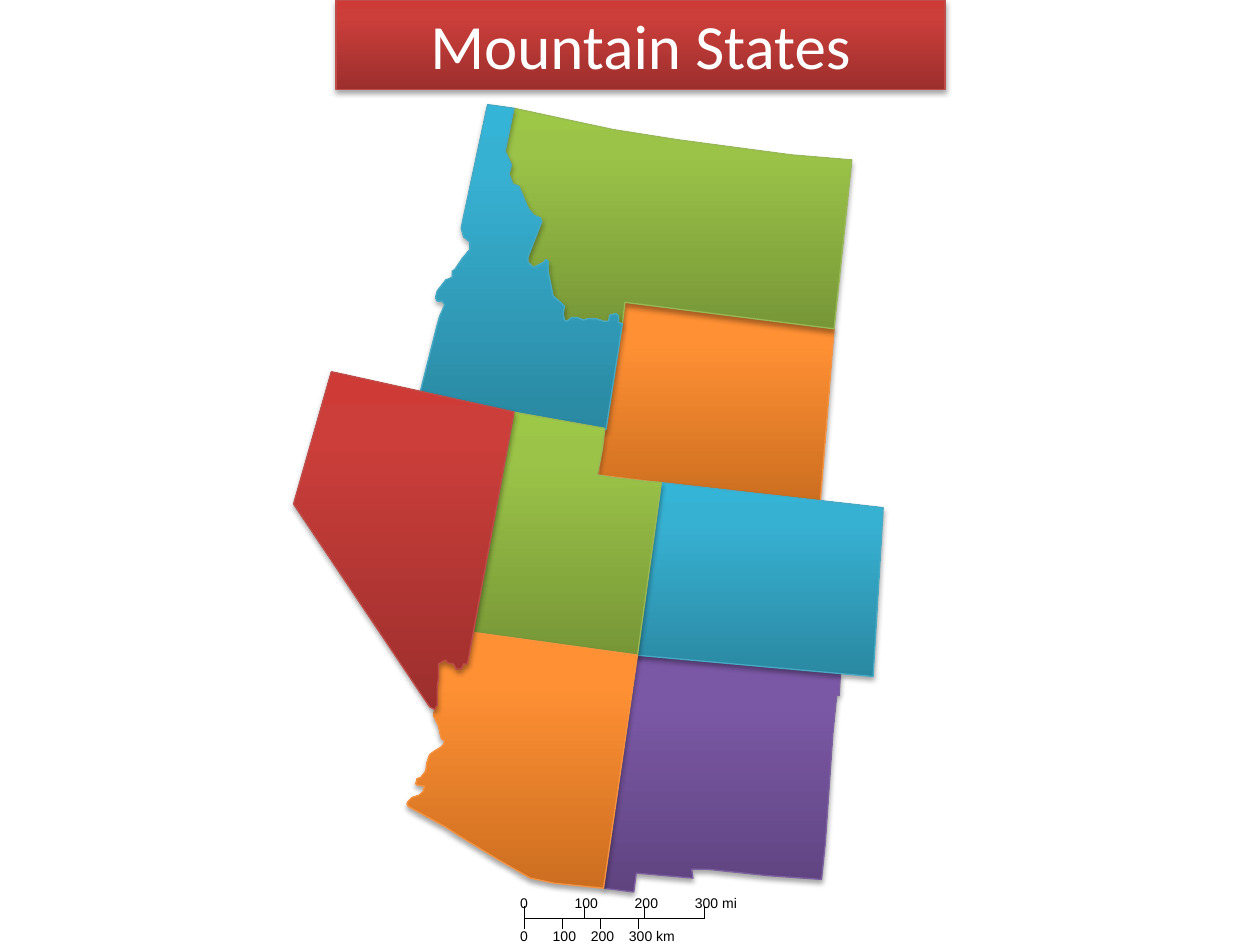
from copy import deepcopy

from lxml.etree import SubElement
from pptx import Presentation
from pptx.dml.color import RGBColor
from pptx.enum.shapes import MSO_CONNECTOR
from pptx.enum.text import MSO_ANCHOR, MSO_AUTO_SIZE, PP_ALIGN
from pptx.oxml.ns import qn
from pptx.util import Pt

COLORS = {"text": "000000", "title": "FFFFFF"}
# Gradient from bottom to top, then the outline
THEMES = {
    "red": ("9C2F2D", "CB3E3A", "CE3B37", "BF4C48"),
    "green": ("779737", "9BC348", "9DC746", "98B955"),
    "purple": ("5F4480", "7B58A6", "7C57A8", "7D60A0"),
    "blue": ("2A88A2", "37B1D2", "34B4D6", "46AAC5"),
    "orange": ("CC6E20", "FF9034", "FF9136", "F69240"),
}

MAP_UNIT = Pt(0.72)  # state outlines are given in this unit

IDAHO_MONTANA = [
    (408, 86), (401, 120), (406, 131), (404, 138), (407, 146), (412, 148),
    (419, 165), (423, 170), (424, 171), (429, 173), (430, 176), (419, 204),
    (419, 208), (423, 212), (424, 212), (432, 208), (433, 206), (435, 207),
    (435, 215), (439, 235), (445, 240), (448, 243), (447, 249), (448, 254),
    (450, 255), (454, 252), (458, 252), (463, 254), (467, 253), (473, 253),
    (479, 255), (483, 255), (484, 250), (489, 249), (491, 251), (491, 256),
    (494, 257),
]
NEVADA_ARIZONA = [
    (371, 527), (368, 527), (366, 531), (362, 531), (360, 527), (355, 526),
    (354, 524), (353, 524), (348, 527), (348, 538), (347, 546), (347, 560),
    (345, 563),
]
NEW_MEXICO = [
    (550, 697), (549, 690), (562, 690), (609, 695), (652, 698), (655, 669),
    (661, 582), (664, 552), (666, 552), (667, 535), (506, 518), (479, 705),
    (503, 708), (505, 693),
]
WYOMING = [(662, 261), (496, 240), (475, 377), (651, 399)]
MONTANA = IDAHO_MONTANA + [
    (496, 240), (662, 261), (676, 127), (628, 123), (583, 117), (538, 111),
    (487, 103), (459, 97),
]
COLORADO = [(693, 537), (701, 403), (524, 383), (505, 520)]
IDAHO = IDAHO_MONTANA + [
    (481, 341), (333, 313), (347, 258), (349, 251), (353, 242), (351, 239),
    (347, 239), (346, 237), (346, 235), (347, 231), (354, 222), (357, 221),
    (359, 220), (359, 215), (361, 214), (367, 205), (373, 198), (373, 192),
    (368, 188), (366, 181), (387, 83),
]
UTAH = [
    (506, 520), (375, 502), (407, 327), (480, 340), (478, 357), (474, 377),
    (486, 379), (512, 382), (525, 383),
]
ARIZONA = NEVADA_ARIZONA + [
    (344, 568), (348, 576), (350, 585), (351, 587), (353, 588), (352, 591),
    (350, 593), (345, 596), (341, 599), (339, 605), (338, 612), (334, 617),
    (331, 618), (331, 619), (330, 622), (331, 623), (337, 624), (336, 628),
    (333, 631), (327, 633), (324, 636), (323, 638), (324, 640), (353, 656),
    (372, 668), (395, 682), (421, 697), (440, 701), (479, 705), (506, 520),
    (376, 502),
]
NEVADA = NEVADA_ARIZONA + [(341, 561), (233, 400), (263, 295), (408, 327)]

STATES = [
    (NEW_MEXICO, "purple"), (WYOMING, "orange"), (MONTANA, "green"),
    (COLORADO, "blue"), (IDAHO, "blue"), (UTAH, "green"),
    (ARIZONA, "orange"), (NEVADA, "red"),
]

SCALE_LEFT, SCALE_RIGHT, SCALE_Y = 299.5, 403, 524.5
# Labels, tick spacing, tick end, label top
SCALES = [
    (("0", "100", "200", "300 mi"), 34.35, 517.7, 511.2),
    (("0", "100", "200", "300 km"), 21.8, 530.6, 529.9),
]


def set_text(tf, text, *, size, font, color, align=PP_ALIGN.LEFT,
             anchor=MSO_ANCHOR.TOP, wrap=False, margin=0):
    tf.word_wrap = wrap
    tf.auto_size = MSO_AUTO_SIZE.NONE
    tf.vertical_anchor = anchor
    tf.margin_left = tf.margin_right = Pt(margin)
    tf.margin_top = tf.margin_bottom = Pt(margin / 2)
    p = tf.paragraphs[0]
    p.alignment = align
    r = p.add_run()
    r.text = text
    r.font.size = Pt(size)
    r.font.name = font
    r.font.color.rgb = RGBColor.from_string(COLORS[color])


def apply_theme(sp, theme):
    """Give a shape its three-stop gradient, outline and soft shadow."""
    *stops, outline = THEMES[theme]
    sp.fill.gradient()
    sp.fill.gradient_angle = 90
    gs_list = sp.element.spPr.find(".//" + qn("a:gsLst"))
    gs_list.append(deepcopy(gs_list[0]))
    for stop, pos, color in zip(sp.fill.gradient_stops, (0, 0.8, 1), stops):
        stop.position = pos
        stop.color.rgb = RGBColor.from_string(color)
    sp.line.color.rgb = RGBColor.from_string(outline)
    sp.line.width = Pt(0.75)
    sp.shadow.inherit = False
    effects = sp.element.spPr.find(qn("a:effectLst"))
    shadow = SubElement(effects, qn("a:outerShdw"), blurRad=str(Pt(3.1)),
                        dist=str(Pt(1.8)), dir="5400000", rotWithShape="0")
    color = SubElement(shadow, qn("a:srgbClr"), val=COLORS["text"])
    SubElement(color, qn("a:alpha"), val="35000")


def add_state(s, outline, theme):
    builder = s.shapes.build_freeform(*outline[0], scale=MAP_UNIT)
    builder.add_line_segments(outline[1:], close=True)
    apply_theme(builder.convert_to_shape(), theme)


def add_line(shapes, x1, y1, x2, y2):
    line = shapes.add_connector(MSO_CONNECTOR.STRAIGHT,
                                Pt(x1), Pt(y1), Pt(x2), Pt(y2))
    line.line.color.rgb = RGBColor.from_string(COLORS["text"])
    line.line.width = Pt(0.25)
    SubElement(line._element.spPr, qn("a:effectLst"))


def add_label(shapes, text, x, y):
    box = shapes.add_textbox(Pt(x), Pt(y), Pt(4.9 * len(text) + 4.5), Pt(9.4))
    set_text(box.text_frame, text, size=8, font="Arial", color="text")


def add_scale_bar(s):
    shapes = s.shapes.add_group_shape().shapes
    add_line(shapes, SCALE_LEFT, SCALE_Y, SCALE_RIGHT, SCALE_Y)
    for labels, gap, tick_end, label_top in SCALES:
        for i, label in enumerate(labels):
            x = SCALE_LEFT + i * gap
            add_line(shapes, x, SCALE_Y, x, tick_end)
            add_label(shapes, label, x - (5.5 if i else 2.2), label_top)


def add_title(s, text):
    sp = s.shapes.title
    sp.left, sp.top, sp.width, sp.height = Pt(192), Pt(0), Pt(348), Pt(51)
    apply_theme(sp, "red")
    set_text(sp.text_frame, text, size=36, font="Calibri", color="title",
             align=PP_ALIGN.CENTER, anchor=MSO_ANCHOR.MIDDLE, wrap=True,
             margin=7.2)


def main():
    prs = Presentation()
    prs.slide_width, prs.slide_height = Pt(720), Pt(540)
    s = prs.slides.add_slide(prs.slide_layouts[5])
    for outline, theme in STATES:
        add_state(s, outline, theme)
    add_scale_bar(s)
    add_title(s, "Mountain States")
    prs.save("out.pptx")


if __name__ == "__main__":
    main()
